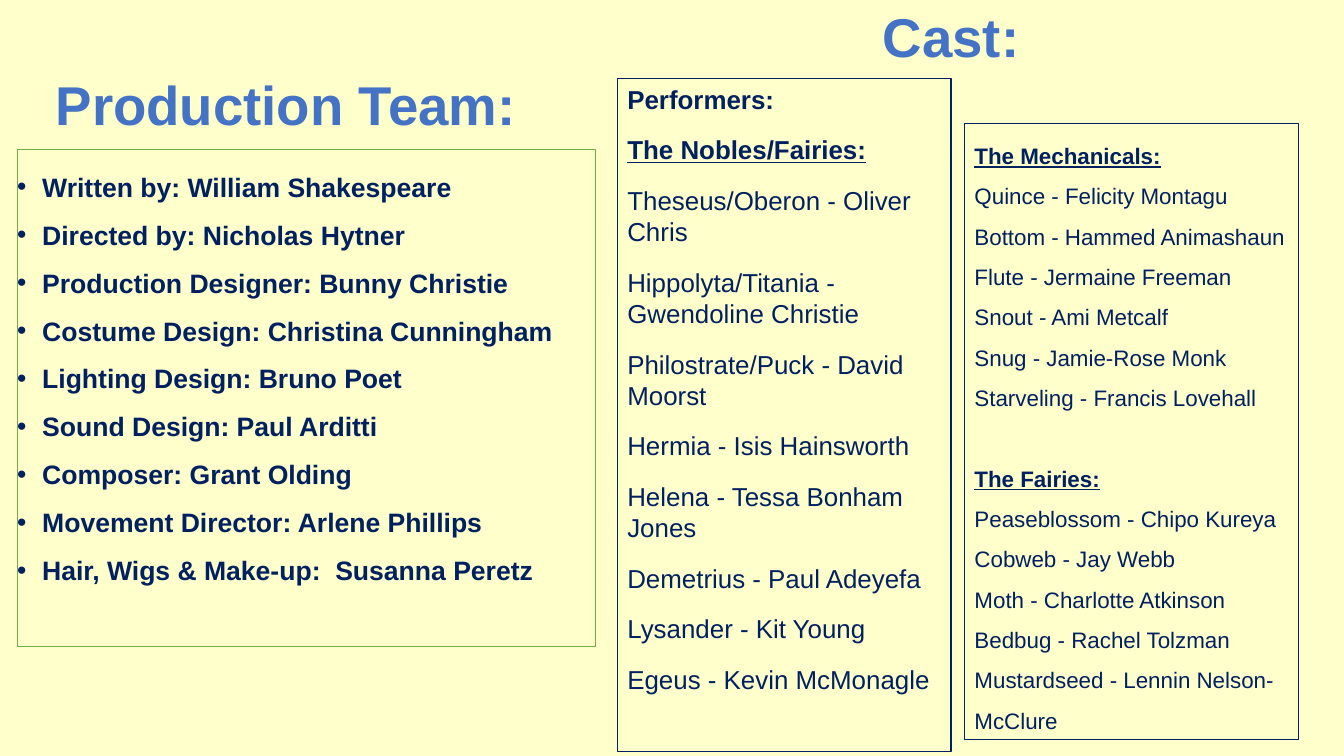
from lxml.etree import SubElement
from pptx import Presentation
from pptx.dml.color import RGBColor
from pptx.enum.shapes import MSO_SHAPE
from pptx.enum.text import MSO_ANCHOR, PP_ALIGN
from pptx.oxml.ns import qn
from pptx.util import Pt

NAVY, BLUE, GREEN, CREAM = "002060", "4472C4", "70AD47", "FFFFCC"

TEAM = [
    "Written by: William Shakespeare",
    "Directed by: Nicholas Hytner",
    "Production Designer: Bunny Christie",
    "Costume Design: Christina Cunningham",
    "Lighting Design: Bruno Poet",
    "Sound Design: Paul Arditti",
    "Composer: Grant Olding",
    "Movement Director: Arlene Phillips",
    "Hair, Wigs & Make-up:  Susanna Peretz",
]
NOBLES = [
    "Theseus/Oberon - Oliver Chris",
    "Hippolyta/Titania - Gwendoline Christie",
    "Philostrate/Puck - David Moorst",
    "Hermia - Isis Hainsworth",
    "Helena - Tessa Bonham Jones",
    "Demetrius - Paul Adeyefa",
    "Lysander - Kit Young",
    "Egeus - Kevin McMonagle",
]
CRAFTS = [
    "Quince - Felicity Montagu",
    "Bottom - Hammed Animashaun",
    "Flute - Jermaine Freeman",
    "Snout - Ami Metcalf",
    "Snug - Jamie-Rose Monk",
    "Starveling - Francis Lovehall",
]
FAIRIES = [
    "Peaseblossom - Chipo Kureya",
    "Cobweb - Jay Webb",
    "Moth - Charlotte Atkinson",
    "Bedbug - Rachel Tolzman",
    "Mustardseed - Lennin Nelson-McClure",
]


def tint(code):
    """Turn a hex string into a colour."""
    return RGBColor.from_string(code)


def setup(frame, left, right):
    """Wrap a text frame from its top with the given side insets."""
    frame.word_wrap = True
    frame.vertical_anchor = MSO_ANCHOR.TOP
    frame.margin_left, frame.margin_right = Pt(left), Pt(right)
    frame.margin_top = frame.margin_bottom = Pt(3.6)
    return frame


def write(frame, text, size, pitch, color=NAVY, bold=False, under=False,
          align=PP_ALIGN.LEFT, before=0, after=0, bullet=False):
    """Add one formatted paragraph to a text frame."""
    first = not frame.paragraphs[0].runs
    para = frame.paragraphs[0] if first else frame.add_paragraph()
    para.alignment = align
    para.line_spacing = Pt(pitch)
    para.space_before = Pt(0 if first else before)
    para.space_after = Pt(after)
    if bullet:
        props = para._p.get_or_add_pPr()
        props.set("marL", str(Pt(18)))
        props.set("indent", str(Pt(-18)))
        SubElement(props, qn("a:buFont")).set("typeface", "Arial")
        SubElement(props, qn("a:buChar")).set("char", "•")
    run = para.add_run()
    run.text = text
    font = run.font
    font.name, font.size = "Arial", Pt(size)
    font.bold, font.underline = bold, under
    font.color.rgb = tint(color)


def panel(slide, box, edge, left, right):
    """Draw an outlined panel and return its text frame."""
    shape = slide.shapes.add_shape(MSO_SHAPE.RECTANGLE, *map(Pt, box))
    shape.shadow.inherit = False
    shape.fill.background()
    shape.line.color.rgb = tint(edge)
    shape.line.width = Pt(0.75)
    return setup(shape.text_frame, left, right)


def heading(slide, box, text):
    """Place a large centred heading."""
    shape = slide.shapes.add_textbox(*map(Pt, box))
    frame = setup(shape.text_frame, 7.2, 7.2)
    write(frame, text, 39, 42.1, color=BLUE, bold=True, align=PP_ALIGN.CENTER)


def team(slide, box):
    """List the production team with bullets."""
    frame = panel(slide, box, GREEN, 0, 0)
    for credit in TEAM:
        write(frame, credit, 19, 34.2, bold=True, bullet=True)


def nobles(slide, box):
    """List the main performers."""
    frame = panel(slide, box, NAVY, 7.2, 0)
    style = dict(size=18.5, pitch=22.2, before=12, after=2)
    write(frame, "Performers:", bold=True, **style)
    write(frame, "The Nobles/Fairies:", bold=True, under=True, **style)
    for role in NOBLES:
        write(frame, role, **style)


def troupe(slide, box):
    """List the mechanicals and the fairies under their titles."""
    frame = panel(slide, box, NAVY, 7.2, 7.2)
    style = dict(size=16, pitch=28.8)
    for title, roles in (("The Mechanicals:", CRAFTS), ("The Fairies:", FAIRIES)):
        write(frame, title, bold=True, under=True, before=28.8, **style)
        for role in roles:
            write(frame, role, **style)


def main():
    """Build and save the credits slide."""
    deck = Presentation()
    deck.slide_width, deck.slide_height = Pt(960), Pt(540)
    slide = deck.slides.add_slide(deck.slide_layouts[6])
    slide.background.fill.solid()
    slide.background.fill.fore_color.rgb = tint(CREAM)
    team(slide, (12.2, 107, 413.3, 355))
    nobles(slide, (441, 56, 238.3, 481))
    troupe(slide, (689, 88.4, 238.3, 440))
    heading(slide, (612.7, 2.9, 133.2, 51.8), "Cast:")
    heading(slide, (24.5, 51.8, 359.3, 51.8), "Production Team:")
    deck.save("out.pptx")


if __name__ == "__main__":
    main()
